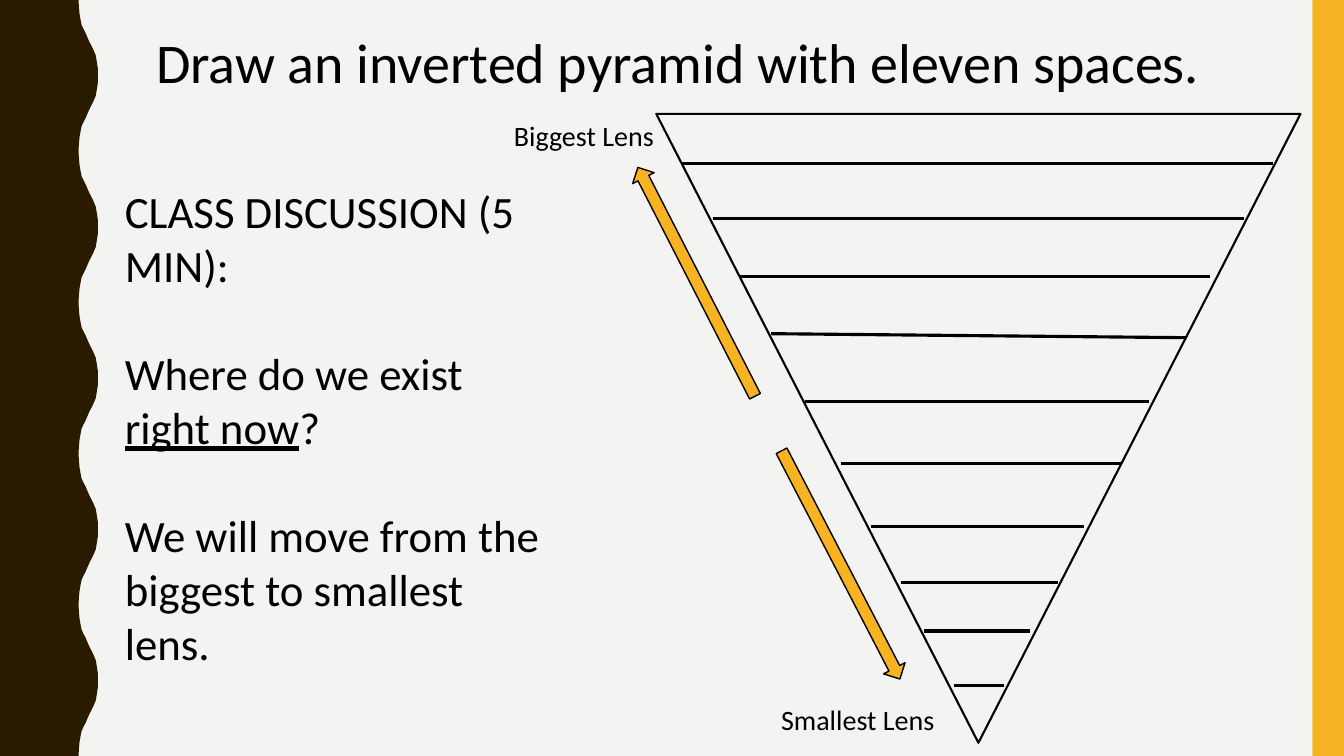
from dataclasses import dataclass

from lxml.etree import SubElement
from pptx import Presentation
from pptx.dml.color import RGBColor
from pptx.enum.shapes import MSO_CONNECTOR as Connector, MSO_SHAPE as Preset
from pptx.oxml.ns import qn
from pptx.util import Inches, Pt


@dataclass(frozen=True)
class Theme:
    font: str = "Calibri"
    paper: str = "F3F3F2"
    ink: str = "000000"
    wood: str = "2A1A00"
    gold: str = "F8B323"
    title: int = 40
    body: int = 32
    label: int = 20
    body_gap: int = 39
    outline: float = 1.5
    rule: float = 2.25
    arrow_edge: float = 1


THEME = Theme()
WIDTH, HEIGHT = Inches(13.33), Inches(7.5)
COLUMNS, ROWS = 64, 36

WAVE_COUNT = 5
WAVE_ROWS = ROWS / WAVE_COUNT
HALF_WAVE = [
    (3.74, 0), (3.76, 0.34), (3.79, 0.67), (3.84, 0.96), (3.89, 1.2),
    (3.98, 1.39), (4.08, 1.58), (4.18, 1.82), (4.27, 2.02), (4.37, 2.21),
    (4.46, 2.4), (4.56, 2.64), (4.61, 2.93), (4.66, 3.26), (4.66, 3.6),
]
PYRAMID_RULES = [
    (32.45, 7.78, 60.62, 7.78),
    (33.94, 10.42, 59.23, 10.42),
    (35.18, 13.15, 57.6, 13.15),
    (36.72, 15.89, 56.5, 16.08),
    (38.35, 19.1, 54.72, 19.1),
    (40.03, 22.08, 53.42, 22.08),
    (41.47, 25.06, 51.6, 25.06),
    (42.91, 27.74, 50.4, 27.74),
    (44.02, 30.05, 49.06, 30.05),
    (45.41, 32.64, 47.81, 32.64),
]
DISCUSSION = [
    [("CLASS DISCUSSION (5 MIN):", False)],
    [("Where do we exist ", False), ("right now", True), ("?", False)],
    [("We will move from the biggest to smallest lens.", False)],
]


def place(column, row):
    return round(column * WIDTH / COLUMNS), round(row * HEIGHT / ROWS)


def color(value):
    return RGBColor.from_string(value)


def style(shape, fill=None, line=None, weight=1):
    shape.shadow.inherit = False
    if fill:
        shape.fill.solid()
        shape.fill.fore_color.rgb = color(fill)
    else:
        shape.fill.background()
    if line:
        shape.line.color.rgb = color(line)
        shape.line.width = Pt(weight)
    else:
        shape.line.fill.background()


def add_preset(page, preset, area, rotation=0, **look):
    left, top, width, height = area
    shape = page.shapes.add_shape(preset, *place(left, top), *place(width, height))
    shape.rotation = rotation
    style(shape, **look)


def add_wavy_edge(page):
    wave = HALF_WAVE + [(x, WAVE_ROWS - y) for x, y in reversed(HALF_WAVE[:-1])]
    edge = [(x, y + WAVE_ROWS * turn) for turn in range(WAVE_COUNT) for x, y in wave]
    builder = page.shapes.build_freeform(0, 0)
    builder.add_line_segments([place(*point) for point in edge + [(0, ROWS)]])
    style(builder.convert_to_shape(), fill=THEME.wood)


def add_rule(page, left, start_row, right, end_row):
    rule = page.shapes.add_connector(
        Connector.STRAIGHT, *place(left, start_row), *place(right, end_row))
    rule.line.color.rgb = color(THEME.ink)
    rule.line.width = Pt(THEME.rule)
    SubElement(rule.line._get_or_add_ln().getparent(), qn("a:effectLst"))


def add_text(page, text, *, area, size, gap=0):
    left, top, width, height = area
    box = page.shapes.add_textbox(*place(left, top), *place(width, height))
    frame = box.text_frame
    frame.word_wrap = True
    paragraphs = [[(text, False)]] if isinstance(text, str) else text
    for index, spans in enumerate(paragraphs):
        para = frame.add_paragraph() if index else frame.paragraphs[0]
        para.space_before = Pt(gap if index else 0)
        for words, underline in spans:
            span = para.add_run()
            span.text = words
            span.font.name = THEME.font
            span.font.size = Pt(size)
            span.font.color.rgb = color(THEME.ink)
            if underline:
                span.font.underline = True


def add_pyramid(page):
    add_preset(page, Preset.ISOSCELES_TRIANGLE, (31.25, 5.42, 30.68, 29.95),
               rotation=180, line=THEME.ink, weight=THEME.outline)
    for rule in PYRAMID_RULES:
        add_rule(page, *rule)


def add_lens_arrow(page, left, top, rotation):
    add_preset(page, Preset.UP_ARROW, (left, top, 1.15, 12.24), rotation=rotation,
               fill=THEME.gold, line=THEME.ink, weight=THEME.arrow_edge)


def main():
    deck = Presentation()
    deck.slide_width, deck.slide_height = WIDTH, HEIGHT
    page = deck.slides.add_slide(deck.slide_layouts[6])
    page.background.fill.solid()
    page.background.fill.fore_color.rgb = color(THEME.paper)

    add_wavy_edge(page)
    add_preset(page, Preset.RECTANGLE, (62.5, 0, 1.5, ROWS), fill=THEME.gold)
    add_text(page, DISCUSSION, area=(5.47, 8.5, 21.27, 21.17),
             size=THEME.body, gap=THEME.body_gap)
    add_text(page, "Draw an inverted pyramid with eleven spaces.",
             area=(6.96, 1.06, 52.53, 3.7), size=THEME.title)
    add_pyramid(page)
    add_lens_arrow(page, 32.59, 7.3, 332.9)
    add_lens_arrow(page, 39.46, 20.78, 152.6)
    add_text(page, "Biggest Lens", area=(24, 5.42, 7.92, 2.11), size=THEME.label)
    add_text(page, "Smallest Lens", area=(36.72, 33.22, 8.74, 2.11), size=THEME.label)

    deck.save("out.pptx")


if __name__ == "__main__":
    main()
